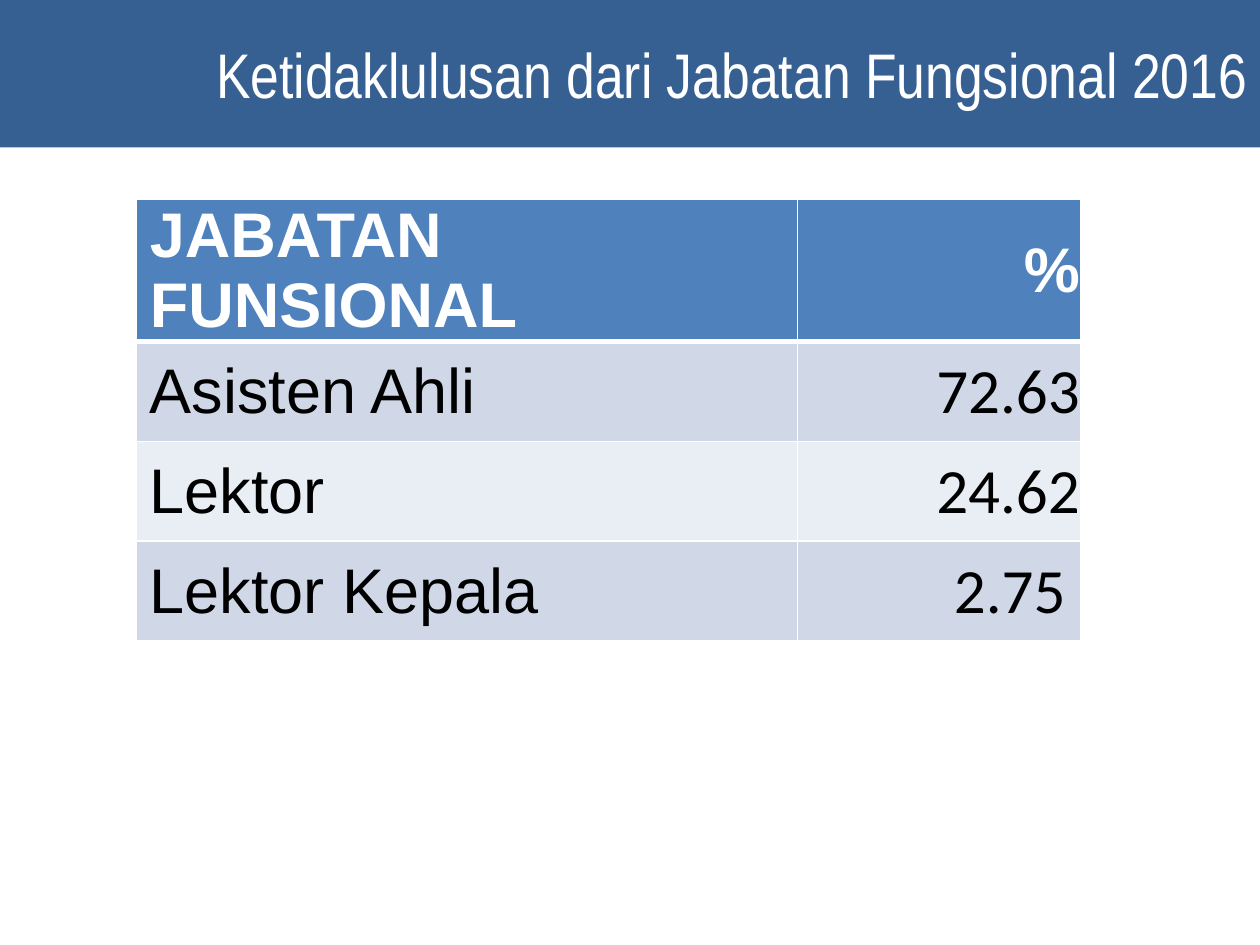
from lxml import etree
from pptx import Presentation
from pptx import util as u
from pptx.dml.color import RGBColor
from pptx.enum import text
from pptx.oxml import ns

ROWS = [
    ("JABATAN FUNSIONAL", "%"),
    ("Asisten Ahli", "72.63"),
    ("Lektor", "24.62"),
    ("Lektor Kepala", "2.75 "),
]
COLUMN_SHARES = (0.7, 0.3)


def set_fill(fill, color):
    fill.solid()
    fill.fore_color.rgb = RGBColor.from_string(color)


def add_run(paragraph, words, font, color, bold=False):
    run = paragraph.add_run()
    run.text = words
    run.font.name = font
    run.font.size = u.Pt(36)
    run.font.bold = bold
    run.font.color.rgb = RGBColor.from_string(color)


def set_borders(cell, color, widths):
    properties = cell._tc.get_or_add_tcPr()
    for side, width in widths.items():
        line = etree.SubElement(properties, ns.qn(f"a:ln{side}"), w=str(u.Pt(width)))
        fill = etree.SubElement(line, ns.qn("a:solidFill"))
        etree.SubElement(fill, ns.qn("a:srgbClr"), val=color)


def place_title(title, left, top, width, height):
    title.left, title.top, title.width, title.height = left, top, width, height
    set_fill(title.fill, "376092")
    frame = title.text_frame
    frame.word_wrap = True
    frame.auto_size = text.MSO_AUTO_SIZE.NONE
    frame.vertical_anchor = text.MSO_ANCHOR.MIDDLE
    paragraph = frame.paragraphs[0]
    paragraph.alignment = text.PP_ALIGN.RIGHT
    add_run(paragraph, "Ketidaklulusan dari Jabatan Fungsional 2016", "Arial Narrow", "FFFFFF")


def format_cell(cell, words, row, column):
    header = row == 0
    set_borders(cell, "FFFFFF", {
        "L": 1, "R": 1, "T": 3 if row == 1 else 1, "B": 3 if header else 1,
    })
    set_fill(cell.fill, "4F81BD" if header else "D0D8E8" if row % 2 else "E9EDF4")
    cell.vertical_anchor = text.MSO_ANCHOR.MIDDLE
    cell.margin_left = u.Inches(0.01 if column else 0.11)
    cell.margin_right = cell.margin_top = u.Inches(0.01)
    cell.margin_bottom = 0
    paragraph = cell.text_frame.paragraphs[0]
    paragraph.alignment = text.PP_ALIGN.RIGHT if column else text.PP_ALIGN.LEFT
    font = "Calibri" if column and not header else "Arial"
    add_run(paragraph, words, font, "FFFFFF" if header else "000000", header)


def add_rank_table(slide, left, top, width, height):
    table = slide.shapes.add_table(
        len(ROWS), len(COLUMN_SHARES), left, top, width, height
    ).table
    for column, share in zip(table.columns, COLUMN_SHARES):
        column.width = round(width * share)
    for row, entries in enumerate(ROWS):
        for column, words in enumerate(entries):
            format_cell(table.cell(row, column), words, row, column)


def main():
    presentation = Presentation()
    presentation.slide_width = u.Inches(10)
    presentation.slide_height = u.Inches(7.5)
    slide = presentation.slides.add_slide(presentation.slide_layouts[5])
    place_title(slide.shapes.title, 0, 0, presentation.slide_width, u.Inches(1.17))
    add_rank_table(slide, u.Inches(1.08), u.Inches(1.58), u.Inches(7.5), u.Inches(3.17))
    presentation.save("out.pptx")


if __name__ == "__main__":
    main()
